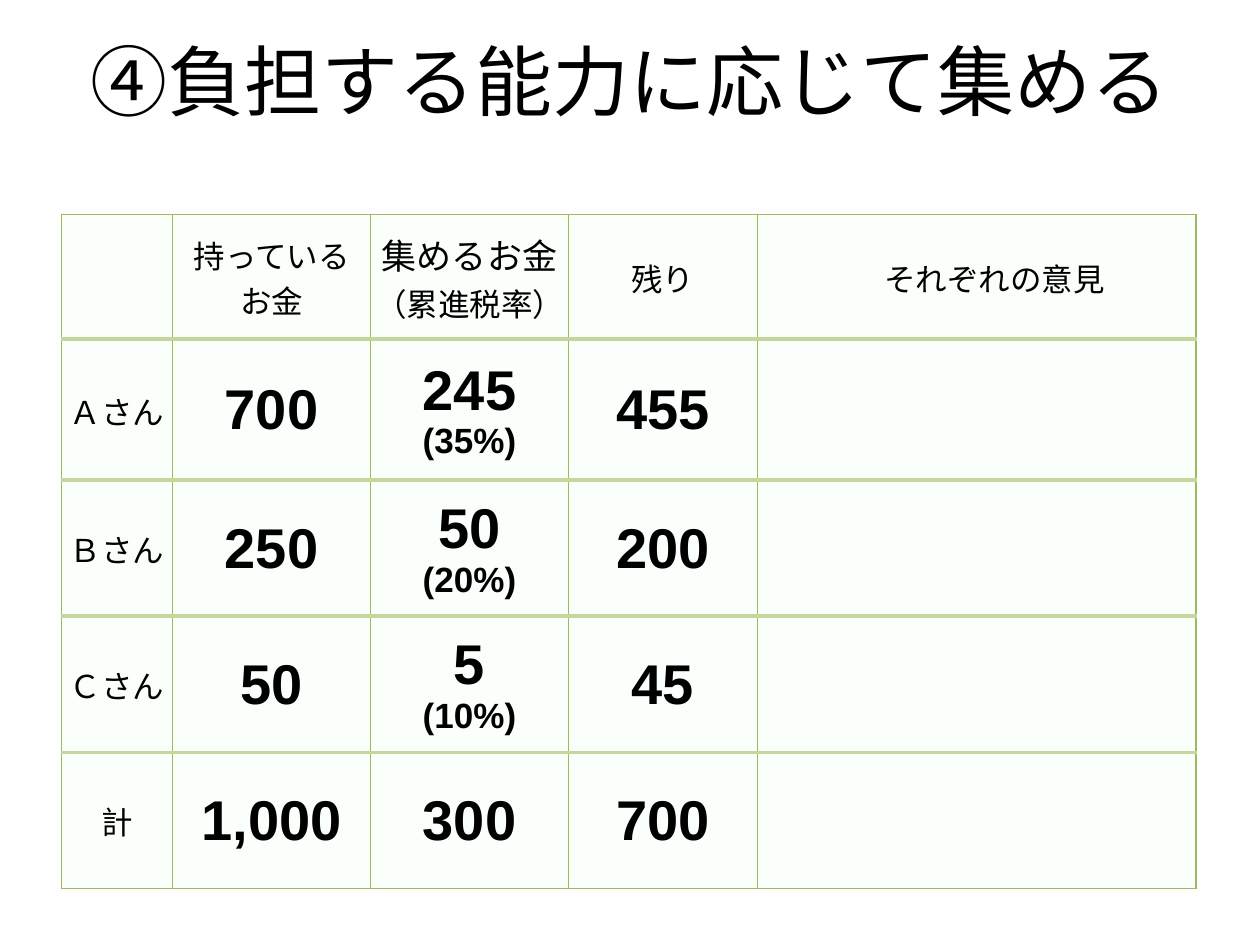
from lxml import etree
from pptx import Presentation
from pptx.dml.color import RGBColor
from pptx.enum import text
from pptx.oxml import ns
from pptx.util import Cm, Pt

BLACK = RGBColor(0x00, 0x00, 0x00)
MINT = RGBColor(0xFB, 0xFF, 0xFB)
GREEN = RGBColor(0x9B, 0xBB, 0x59)
PALE_GREEN = RGBColor(0xC3, 0xD6, 0x9B)

JAPANESE, LATIN = "Noto Sans CJK JP", "Arial"

COLUMN_SHARES = [2.24, 3.99, 3.99, 3.81, 8.84]
ROW_SHARES = [2.51, 2.84, 2.74, 2.74, 2.74]

# Each heading is a list of paragraphs, each paragraph a list of (wording, size).
HEADINGS = [
    [],
    [[("持っている", 18)], [("お金", 18)]],
    [[("集めるお金", 20), ("（累進税率）", 18)]],
    [[("残り", 18)]],
    [[("それぞれの意見", 18)]],
]
# person, money held, money collected, tax rate, money left
PEOPLE = [
    ("Ａさん", "700", "245", "(35%)", "455"),
    ("Ｂさん", "250", "50", "(20%)", "200"),
    ("Ｃさん", "50", "5", "(10%)", "45"),
    ("計", "1,000", "300", None, "700"),
]


def add_run(paragraph, wording, size, font=JAPANESE, bold=False):
    run = paragraph.add_run()
    run.text = wording
    run.font.size = Pt(size)
    run.font.bold = bold
    run.font.color.rgb = BLACK
    run.font.name = font
    etree.SubElement(run.font._element, ns.qn("a:ea"), typeface=font)


def set_border(cell, side, color, width):
    line = etree.SubElement(cell._tc.get_or_add_tcPr(), ns.qn(f"a:ln{side}"), w=str(Pt(width)))
    fill = etree.SubElement(line, ns.qn("a:solidFill"))
    etree.SubElement(fill, ns.qn("a:srgbClr"), val=str(color))


def style_cell(cell, first_row, last_row):
    """Draw thin outer and vertical rules, and thick pale rules between rows."""
    thin, thick = (GREEN, 1), (PALE_GREEN, 2.25)
    set_border(cell, "L", *thin)
    set_border(cell, "R", *thin)
    set_border(cell, "T", *(thin if first_row else thick))
    set_border(cell, "B", *(thin if last_row else thick))
    cell.fill.solid()
    cell.fill.fore_color.rgb = MINT
    cell.vertical_anchor = text.MSO_ANCHOR.MIDDLE
    cell.margin_left = cell.margin_right = cell.margin_top = Cm(0.03)
    cell.margin_bottom = 0


def fill_cell(cell, paragraphs, **style):
    frame = cell.text_frame
    for index, runs in enumerate(paragraphs):
        paragraph = frame.add_paragraph() if index else frame.paragraphs[0]
        paragraph.alignment = text.PP_ALIGN.CENTER
        for wording, size in runs:
            add_run(paragraph, wording, size, **style)


def place_title(slide, left, top, width, height):
    title = slide.shapes.title
    title.left, title.top, title.width, title.height = left, top, width, height
    title.text_frame.vertical_anchor = text.MSO_ANCHOR.MIDDLE
    paragraph = title.text_frame.paragraphs[0]
    paragraph.alignment = text.PP_ALIGN.CENTER
    add_run(paragraph, "④負担する能力に応じて集める", 44)


def add_tax_table(slide, left, top, width, height):
    table = slide.shapes.add_table(
        len(ROW_SHARES), len(COLUMN_SHARES), left, top, width, height
    ).table
    table.first_row = table.horz_banding = False
    for column, share in zip(table.columns, COLUMN_SHARES):
        column.width = int(width * share / sum(COLUMN_SHARES))
    for row, share in zip(table.rows, ROW_SHARES):
        row.height = int(height * share / sum(ROW_SHARES))

    last = len(PEOPLE)
    for index, row in enumerate(table.rows):
        for cell in row.cells:
            style_cell(cell, index == 0, index == last)

    for column, heading in enumerate(HEADINGS):
        fill_cell(table.cell(0, column), heading)
    table.cell(0, len(HEADINGS) - 1).margin_left = Cm(0.75)

    for row, (person, held, collected, rate, left_over) in enumerate(PEOPLE, start=1):
        fill_cell(table.cell(row, 0), [[(person, 18)]])
        collected_lines = [[(collected, 32)]]
        if rate:
            collected_lines.append([(rate, 20)])
        amounts = [[[(held, 32)]], collected_lines, [[(left_over, 32)]]]
        for column, lines in enumerate(amounts, start=1):
            fill_cell(table.cell(row, column), lines, font=LATIN, bold=True)


def main():
    deck = Presentation()
    deck.slide_width, deck.slide_height = Cm(25.4), Cm(19.05)
    slide = deck.slides.add_slide(deck.slide_layouts.get_by_name("Title Only"))
    add_tax_table(slide, Cm(1.24), Cm(4.32), Cm(22.87), Cm(13.59))
    place_title(slide, 0, 0, deck.slide_width, Cm(3.23))
    deck.save("out.pptx")


if __name__ == "__main__":
    main()
